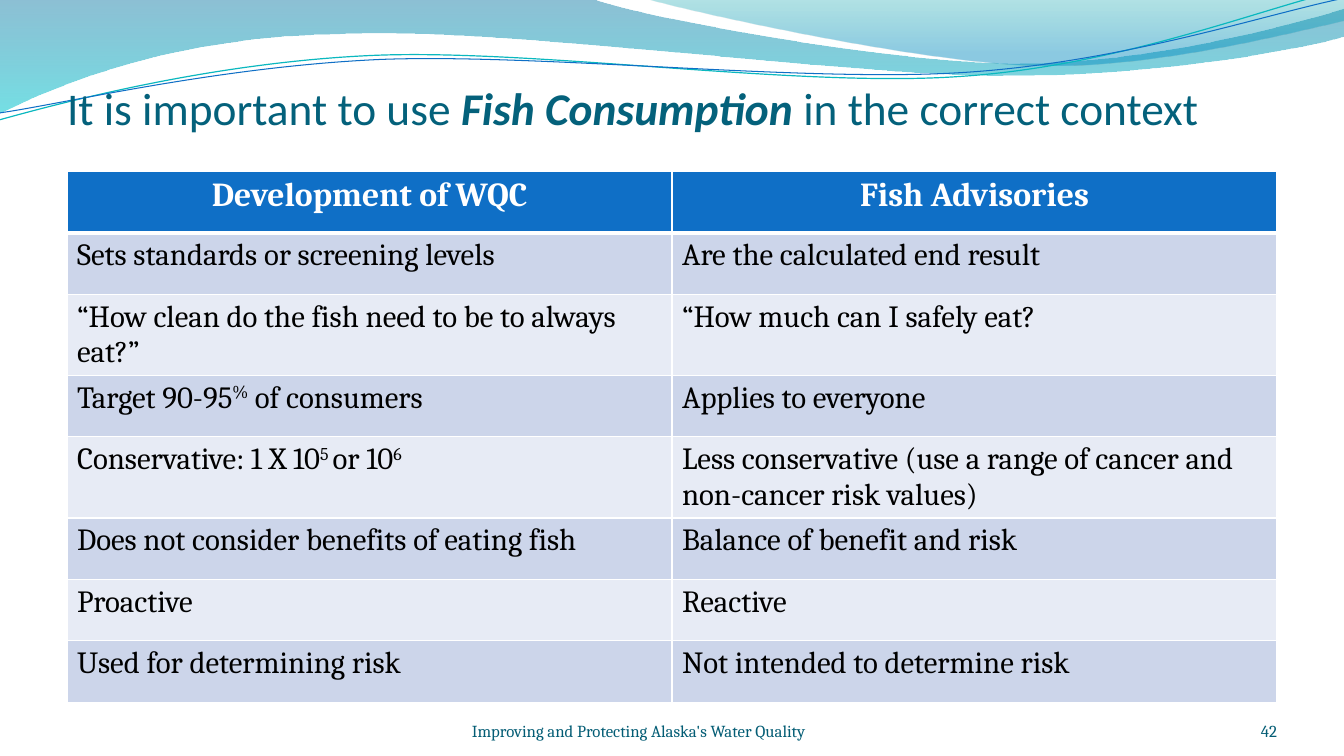
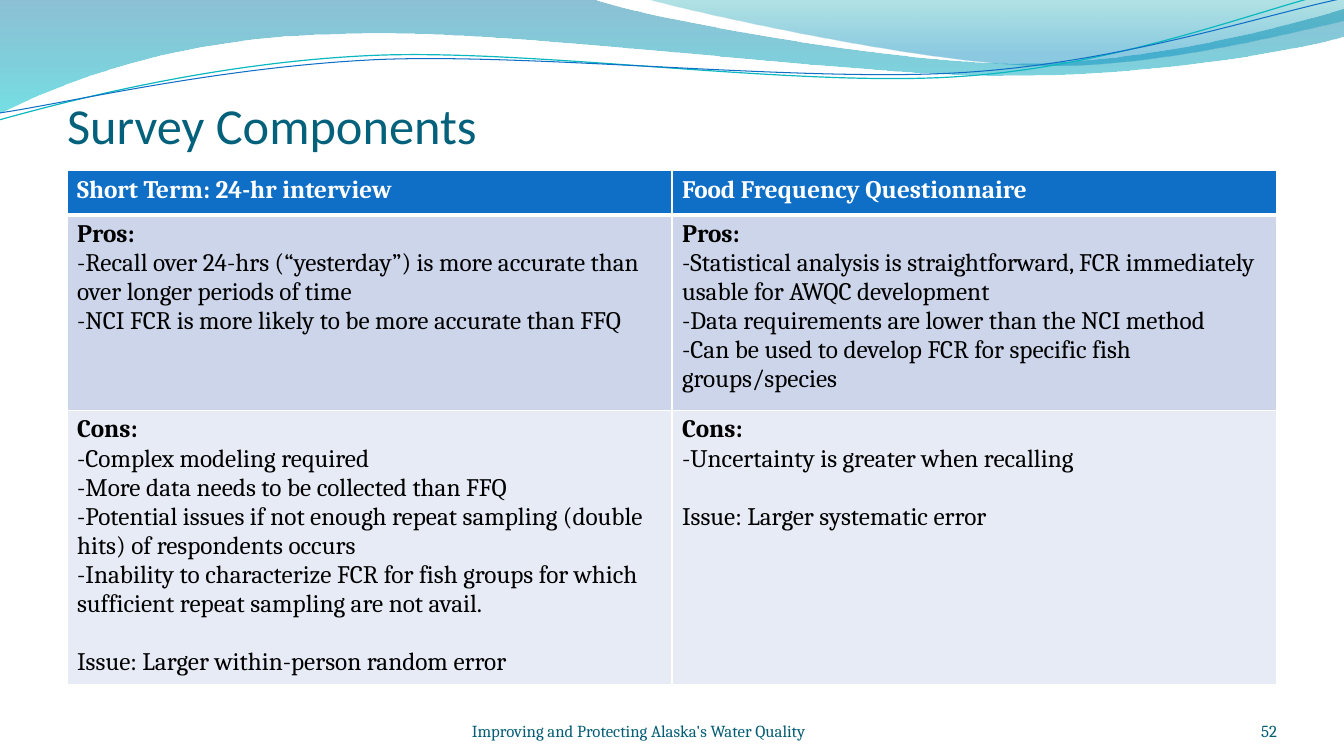
from dataclasses import dataclass

from lxml import etree
from pptx import Presentation, slide as sl, table as tb, util as u
from pptx.dml import color
from pptx.enum import text
from pptx.oxml import ns
from pptx.shapes import autoshape
from pptx.text import text as tx

COLORS = {
    "title": "04617B", "footer": "045D75", "header": "0F6FC6",
    "odd": "CCD5EA", "even": "E7EBF5", "white": "FFFFFF", "black": "000000",
    "teal": "0AB8BF", "deep": "0074A1", "aqua": "00C6CF",
    "sea": "00A1A9", "sky": "008BBF",
}
HEAD_FONT, BODY_FONT = "Calibri", "Cambria"
FOOTER = "Improving and Protecting Alaska's Water Quality"
WIDTH, HEIGHT, CONTENT_W, NUMBER_W = 13.33, 7.5, 12.0, 1.11
LEFT = (WIDTH - CONTENT_W) / 2


@dataclass(frozen=True)
class Run:
    text: str
    bold: bool = False
    italic: bool = False
    raised: bool = False


@dataclass(frozen=True)
class Para:
    runs: tuple[Run, ...]
    before: float = 0


@dataclass(frozen=True)
class Style:
    font: str
    size: float
    color: str
    align: text.PP_ALIGN = text.PP_ALIGN.LEFT


@dataclass(frozen=True)
class Stop:
    position: int
    color: str
    alpha: int


@dataclass(frozen=True)
class Wave:
    start: tuple[float, float]
    segments: tuple[tuple[float, ...], ...]
    stops: tuple[Stop, ...] = ()
    line: str = ""
    weight: float = 0


@dataclass(frozen=True)
class TableSlide:
    title: Para
    title_size: float
    title_height: float
    top: float
    heights: tuple[float, ...]
    head_style: Style
    body_style: Style
    heads: tuple[str, str]
    rows: tuple[tuple[tuple[Para, ...], ...], ...]
    number: str


def para(*parts: str | Run, before: float = 0) -> Para:
    return Para(tuple(Run(x) if isinstance(x, str) else x for x in parts), before)


def review(heading: str, *points: str, issue: str = "") -> tuple[Para, ...]:
    paras = [para(Run(heading, bold=True)), *(para(f"-{x}") for x in points)]
    if issue:
        paras.append(para(f"Issue: {issue}", before=21))
    return tuple(paras)


WAVES = (
    Wave((0, 0), (
        (5.87, -0.01),
        (6.34, 0.17, 8.85, 0.63, 10.11, 0.63),
        (11.38, 0.63, 12.78, 0.26, 13.33, 0.09),
        (13.35, 0.36),
        (13.11, 0.44, 11.6, 0.76, 9.94, 0.75),
        (8.29, 0.75, 5.09, 0.28, 3.43, 0.34),
        (1.72, 0.36, 0.61, 0.83, -0.01, 1.13),
    ), stops=(Stop(0, "deep", 45), Stop(100, "aqua", 55))),
    Wave((6.39, -0.01), (
        (6.79, 0.11, 9.09, 0.62, 10.25, 0.65),
        (11.41, 0.69, 12.82, 0.32, 13.33, 0.21),
        (13.33, 0),
    ), stops=(Stop(0, "sea", 30), Stop(80, "sky", 45))),
    Wave((-0.01, 1.19), (
        (0.64, 1.01, 2.11, 0.62, 3.69, 0.55),
        (5.27, 0.48, 7.9, 0.87, 9.5, 0.76),
        (11.1, 0.66, 12.52, 0.08, 13.31, -0.1),
    ), line="teal", weight=0.85),
    Wave((0, 1.12), (
        (0.63, 1.03, 2.18, 0.66, 3.78, 0.59),
        (5.37, 0.53, 7.96, 0.82, 9.55, 0.72),
        (11.15, 0.62, 12.55, 0.14, 13.34, -0.02),
    ), line="header", weight=0.75),
)

SLIDES = (
    TableSlide(
        title=para("It is important to use ",
                   Run("Fish Consumption ", bold=True, italic=True),
                   "in the correct context"),
        title_size=32.4, title_height=0.57, top=1.7,
        heights=(0.61, 0.61, 0.61, 0.61, 0.8, 0.61, 0.61, 0.61),
        head_style=Style(BODY_FONT, 24, "white", text.PP_ALIGN.CENTER),
        body_style=Style(BODY_FONT, 22, "black"),
        heads=("Development of WQC", "Fish Advisories"),
        rows=tuple(((left,), (right,)) for left, right in (
            (para("Sets standards or screening levels"),
             para("Are the calculated end result")),
            (para("“How clean do the fish need to be to always eat?”"),
             para("“How much can I safely eat?")),
            (para("Target 90-95", Run("%", raised=True), " of consumers"),
             para("Applies to everyone")),
            (para("Conservative: 1 X 10", Run("5 ", raised=True), "or 10",
                  Run("6", raised=True)),
             para("Less conservative (use a range of cancer and "
                  "non-cancer risk values)")),
            (para("Does not consider benefits of eating fish"),
             para("Balance of benefit and risk")),
            (para("Proactive"), para("Reactive")),
            (para("Used for determining risk"),
             para("Not intended to determine risk")),
        )),
        number="42",
    ),
    TableSlide(
        title=para("Survey Components"),
        title_size=36, title_height=0.76, top=1.69,
        heights=(0.44, 1.94, 2.72),
        head_style=Style(BODY_FONT, 18, "white"),
        body_style=Style(BODY_FONT, 18, "black"),
        heads=("Short Term: 24-hr interview", "Food Frequency Questionnaire"),
        rows=(
            (review("Pros:",
                    "Recall over 24-hrs (“yesterday”) is more accurate than "
                    "over longer periods of time",
                    "NCI FCR is more likely to be more accurate than FFQ"),
             review("Pros:",
                    "Statistical analysis is straightforward, FCR immediately "
                    "usable for AWQC development",
                    "Data requirements are lower than the NCI method",
                    "Can be used to develop FCR for specific fish "
                    "groups/species")),
            (review("Cons:",
                    "Complex modeling required",
                    "More data needs to be collected than FFQ",
                    "Potential issues if not enough repeat sampling (double "
                    "hits) of respondents occurs",
                    "Inability to characterize FCR for fish groups for which "
                    "sufficient repeat sampling are not avail.",
                    issue="Larger within-person random error"),
             review("Cons:", "Uncertainty is greater when recalling",
                    issue="Larger systematic error")),
        ),
        number="52",
    ),
)


def rgb(name: str) -> color.RGBColor:
    return color.RGBColor.from_string(COLORS[name])


def write(tf: tx.TextFrame, paras: tuple[Para, ...], style: Style) -> None:
    tf.word_wrap = True
    for i, item in enumerate(paras):
        p = tf.add_paragraph() if i else tf.paragraphs[0]
        p.alignment = style.align
        p.space_before = u.Pt(item.before)
        for part in item.runs:
            r = p.add_run()
            r.text = part.text
            r.font.name, r.font.size = style.font, u.Pt(style.size)
            r.font.bold, r.font.italic = part.bold, part.italic
            r.font.color.rgb = rgb(style.color)
            if part.raised:
                r._r.get_or_add_rPr().set("baseline", "30000")


def set_frame(tf: tx.TextFrame, top: float = 0) -> None:
    tf.auto_size = text.MSO_AUTO_SIZE.NONE
    tf.vertical_anchor = text.MSO_ANCHOR.BOTTOM
    tf.margin_left = tf.margin_right = tf.margin_bottom = 0
    tf.margin_top = u.Inches(top)


def add_color(parent: etree._Element, name: str) -> etree._Element:
    return etree.SubElement(parent, ns.qn("a:srgbClr"), val=COLORS[name])


def fill_gradient(spPr: etree._Element, stops: tuple[Stop, ...]) -> None:
    grad = etree.Element(ns.qn("a:gradFill"), rotWithShape="1")
    stop_list = etree.SubElement(grad, ns.qn("a:gsLst"))
    for stop in stops:
        gs = etree.SubElement(stop_list, ns.qn("a:gs"), pos=str(stop.position * 1000))
        etree.SubElement(add_color(gs, stop.color), ns.qn("a:alpha"),
                         val=str(stop.alpha * 1000))
    etree.SubElement(grad, ns.qn("a:lin"), ang="5400000", scaled="0")
    spPr.replace(spPr.find(ns.qn("a:noFill")), grad)


def bend(sp: autoshape.Shape, segments: tuple[tuple[float, ...], ...]) -> None:
    lines = list(sp.element.iter(ns.qn("a:lnTo")))
    for line, seg in zip(lines, segments):
        if len(seg) == 2:
            continue
        curve = etree.Element(ns.qn("a:cubicBezTo"))
        for x, y in zip(seg[::2], seg[1::2]):
            etree.SubElement(curve, ns.qn("a:pt"), x=str(u.Inches(x) - sp.left),
                             y=str(u.Inches(y) - sp.top))
        line.getparent().replace(line, curve)


def add_wave(s: sl.Slide, wave: Wave) -> autoshape.Shape:
    points = [(u.Inches(x), u.Inches(y))
              for x, y in (wave.start, *(seg[-2:] for seg in wave.segments))]
    builder = s.shapes.build_freeform(*points[0], scale=1.0)
    builder.add_line_segments(points[1:], close=bool(wave.stops))
    sp = builder.convert_to_shape()
    bend(sp, wave.segments)
    sp.shadow.inherit = False
    sp.fill.background()
    if wave.stops:
        sp.line.fill.background()
        fill_gradient(sp.element.spPr, wave.stops)
    else:
        sp.line.color.rgb = rgb(wave.line)
        sp.line.width = u.Pt(wave.weight)
    return sp


def move_to_layout(sp: autoshape.Shape, layout: sl.SlideLayout) -> None:
    new_id = max(item.shape_id for item in layout.shapes) + 1
    sp.element.nvSpPr.cNvPr.set("id", str(new_id))
    layout.shapes.element.append(sp.element)


def set_borders(cell: tb._Cell, top: float, bottom: float) -> None:
    tcPr = cell._tc.get_or_add_tcPr()
    for side, weight in (("L", 1), ("R", 1), ("T", top), ("B", bottom)):
        ln = etree.SubElement(tcPr, ns.qn(f"a:ln{side}"), w=str(u.Pt(weight)))
        add_color(etree.SubElement(ln, ns.qn("a:solidFill")), "white")


def add_grid(s: sl.Slide, data: TableSlide) -> None:
    heads = tuple((para(Run(h, bold=True)),) for h in data.heads)
    rows = (heads, *data.rows)
    table = s.shapes.add_table(
        len(rows), len(heads), u.Inches(LEFT), u.Inches(data.top),
        u.Inches(CONTENT_W), u.Inches(sum(data.heights))).table
    for i, (row, height) in enumerate(zip(rows, data.heights)):
        table.rows[i].height = u.Inches(height)
        fill = "header" if i == 0 else "odd" if i % 2 else "even"
        for j, paras in enumerate(row):
            cell = table.cell(i, j)
            set_borders(cell, 3 if i == 1 else 1, 3 if i == 0 else 1)
            cell.fill.solid()
            cell.fill.fore_color.rgb = rgb(fill)
            write(cell.text_frame, paras, data.body_style if i else data.head_style)


def add_footer(s: sl.Slide, label: str, left: float, width: float,
               align: text.PP_ALIGN) -> None:
    sp = s.shapes.add_textbox(u.Inches(left), u.Inches(6.95),
                              u.Inches(width), u.Inches(0.4))
    set_frame(sp.text_frame)
    write(sp.text_frame, (para(label),), Style(BODY_FONT, 12, "footer", align))


def add_slide(s: sl.Slide, data: TableSlide) -> None:
    title = s.shapes.title
    title.left, title.top = u.Inches(LEFT), u.Inches(0.77)
    title.width, title.height = u.Inches(CONTENT_W), u.Inches(data.title_height)
    set_frame(title.text_frame, top=0.05)
    write(title.text_frame, (data.title,), Style(HEAD_FONT, data.title_size, "title"))
    add_grid(s, data)
    add_footer(s, FOOTER, 3.89, 4.89, text.PP_ALIGN.CENTER)
    add_footer(s, data.number, LEFT + CONTENT_W - NUMBER_W, NUMBER_W,
               text.PP_ALIGN.RIGHT)


def main() -> None:
    prs = Presentation()
    prs.slide_width, prs.slide_height = u.Inches(WIDTH), u.Inches(HEIGHT)
    layout = prs.slide_layouts[5]
    slides = [prs.slides.add_slide(layout) for _ in SLIDES]
    for wave in WAVES:
        move_to_layout(add_wave(slides[0], wave), layout)
    for s, data in zip(slides, SLIDES):
        add_slide(s, data)
    prs.save("out.pptx")


if __name__ == "__main__":
    main()
